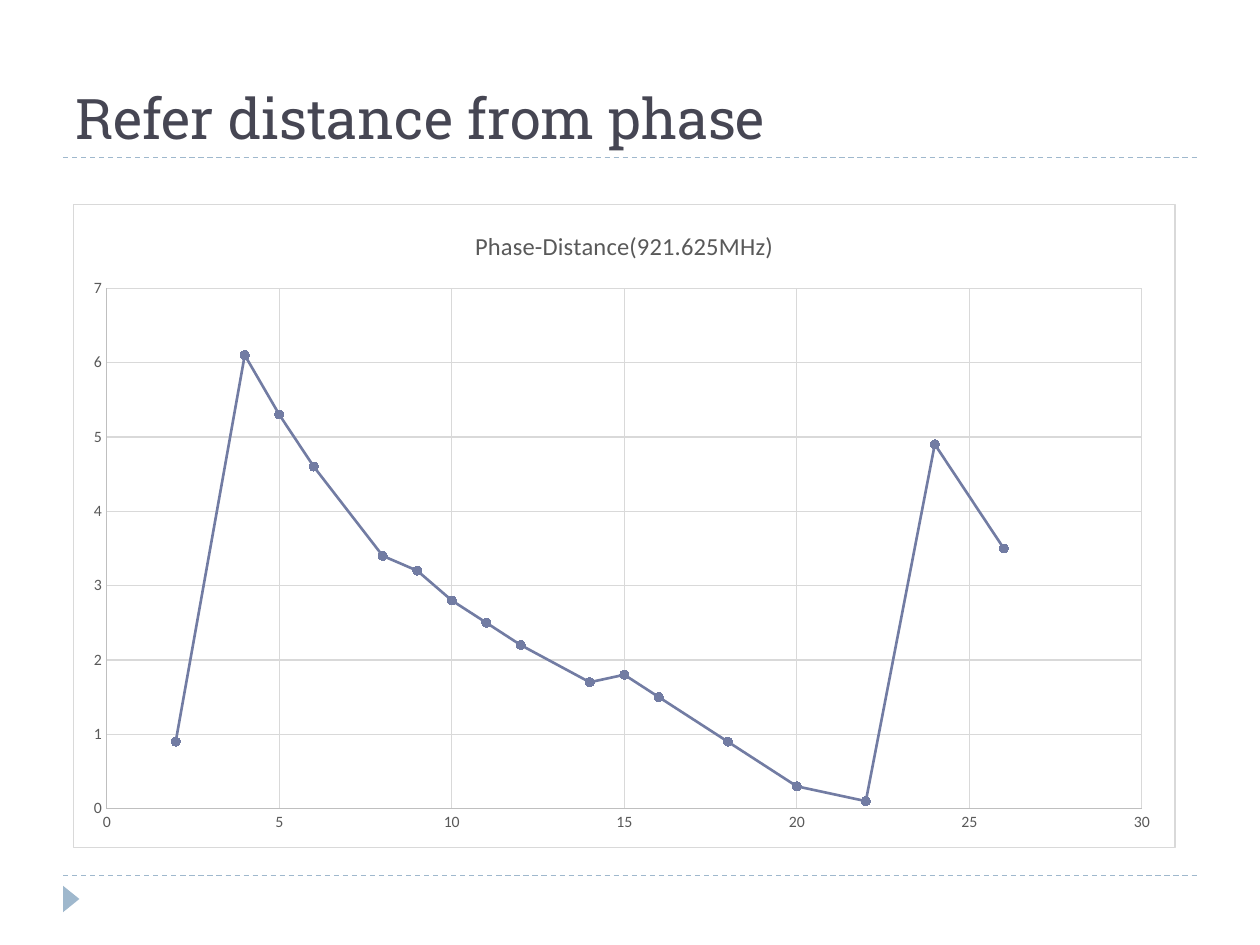
from lxml.etree import SubElement
from pptx import Presentation
from pptx.chart.data import XyChartData
from pptx.dml.color import RGBColor
from pptx.enum.chart import XL_CHART_TYPE, XL_MARKER_STYLE, XL_TICK_MARK
from pptx.enum.dml import MSO_LINE
from pptx.enum.shapes import MSO_CONNECTOR, MSO_SHAPE
from pptx.enum.text import MSO_ANCHOR, PP_ALIGN
from pptx.oxml import parse_xml
from pptx.oxml.ns import nsdecls, qn
from pptx.util import Pt

PX = 9144  # 100 px to the inch
INK = RGBColor(0x46, 0x46, 0x53)
PALE = RGBColor(0x9F, 0xB8, 0xCD)
CURVE = RGBColor(0x72, 0x7C, 0xA3)
GRAY = RGBColor(0x59, 0x59, 0x59)
AXIS = RGBColor(0xBF, 0xBF, 0xBF)
GRID = RGBColor(0xD9, 0xD9, 0xD9)

POINTS = [
    (2, 0.9), (4, 6.1), (5, 5.3), (6, 4.6), (8, 3.4), (9, 3.2),
    (10, 2.8), (11, 2.5), (12, 2.2), (14, 1.7), (15, 1.8), (16, 1.5),
    (18, 0.9), (20, 0.3), (22, 0.1), (24, 4.9), (26, 3.5),
]


def emu(*sizes):
    return [size * PX for size in sizes]


def style_font(font, name, size, color):
    font.name = name
    font.size = Pt(size)
    font.bold = False
    font.color.rgb = color


def style_line(line, color, width=0.75):
    line.color.rgb = color
    line.width = Pt(width)


def add_rule(slide, x, y, w):
    rule = slide.shapes.add_connector(MSO_CONNECTOR.STRAIGHT, *emu(x, y, x + w, y))
    style_line(rule.line, PALE)
    rule.line.dash_style = MSO_LINE.DASH
    SubElement(rule._element.spPr, qn("a:effectLst"))


def add_head(slide, x, y, w, h):
    """Fill the title placeholder and underline it."""
    title = slide.shapes.title
    title.left, title.top, title.width, title.height = emu(x, y, w, h)
    frame = title.text_frame
    frame.text = "Refer distance from phase"
    frame.vertical_anchor = MSO_ANCHOR.BOTTOM
    para = frame.paragraphs[0]
    para.alignment = PP_ALIGN.LEFT
    style_font(para.runs[0].font, "Roboto Slab", 32, INK)
    add_rule(slide, x, y + h, w)


def add_foot(slide, x, y, w):
    """Draw the bottom rule with the marker below it."""
    add_rule(slide, x, y, w)
    mark = slide.shapes.add_shape(
        MSO_SHAPE.ISOSCELES_TRIANGLE, *emu(x - 4, y + 12, 21, 13))
    mark.rotation = 90
    mark.shadow.inherit = False
    mark.fill.solid()
    mark.fill.fore_color.rgb = PALE
    mark.line.fill.background()


def style_axis(axis, top, step):
    axis.minimum_scale, axis.maximum_scale, axis.major_unit = 0, top, step
    axis.major_tick_mark = axis.minor_tick_mark = XL_TICK_MARK.NONE
    axis.has_major_gridlines = True
    style_line(axis.major_gridlines.format.line, GRID)
    style_line(axis.format.line, AXIS)
    style_font(axis.tick_labels.font, "Calibri", 9, GRAY)
    axis.tick_labels.number_format = "General"
    axis.tick_labels.number_format_is_linked = False


def frame_chart(chart):
    """Give the chart area a square border and the plot a fixed place."""
    body = chart._chartSpace.find(qn("c:chart"))
    body.addprevious(parse_xml(f'<c:roundedCorners {nsdecls("c")} val="0"/>'))
    body.addnext(parse_xml(
        f'<c:spPr {nsdecls("c", "a")}>'
        '<a:solidFill><a:srgbClr val="FFFFFF"/></a:solidFill>'
        f'<a:ln w="{Pt(0.75)}"><a:solidFill><a:srgbClr val="{GRID}"/>'
        '</a:solidFill></a:ln></c:spPr>'))
    plot = body.find(qn("c:plotArea"))
    for old in plot.findall(qn("c:layout")):
        plot.remove(old)
    place = {"x": 0.03, "y": 0.13, "w": 0.94, "h": 0.81}
    parts = '<c:layoutTarget val="inner"/><c:xMode val="edge"/><c:yMode val="edge"/>'
    parts += "".join(f'<c:{key} val="{val}"/>' for key, val in place.items())
    plot.insert(0, parse_xml(
        f'<c:layout {nsdecls("c")}><c:manualLayout>{parts}'
        '</c:manualLayout></c:layout>'))


def add_plot(slide, x, y, w, h):
    data = XyChartData()
    series = data.add_series("Series 1")
    for dist, phase in POINTS:
        series.add_data_point(dist, phase)
    chart = slide.shapes.add_chart(
        XL_CHART_TYPE.XY_SCATTER_SMOOTH, *emu(x, y, w, h), data).chart
    chart.has_legend = False
    chart.font.name = "Calibri"
    chart.font.size = Pt(10)
    chart.has_title = True
    chart.chart_title.include_in_layout = False
    frame = chart.chart_title.text_frame
    frame.text = "Phase-Distance(921.625MHz)"
    style_font(frame.paragraphs[0].runs[0].font, "Calibri", 14, GRAY)
    style_axis(chart.category_axis, 30, 5)
    style_axis(chart.value_axis, 7, 1)

    plot = chart.plots[0]
    plot.vary_by_categories = False
    curve = plot.series[0]
    curve.smooth = True
    style_line(curve.format.line, CURVE, 1.5)
    curve.marker.style = XL_MARKER_STYLE.CIRCLE
    curve.marker.size = 5
    curve.marker.format.fill.solid()
    curve.marker.format.fill.fore_color.rgb = CURVE
    style_line(curve.marker.format.line, CURVE)
    frame_chart(chart)


def main():
    deck = Presentation()
    deck.slide_width, deck.slide_height = emu(1000, 750)
    slide = deck.slides.add_slide(deck.slide_layouts[5])
    add_foot(slide, 50, 695, 900)
    add_head(slide, 50, 17, 900, 108)
    add_plot(slide, 58, 162, 875, 511)
    deck.save("out.pptx")


if __name__ == "__main__":
    main()
